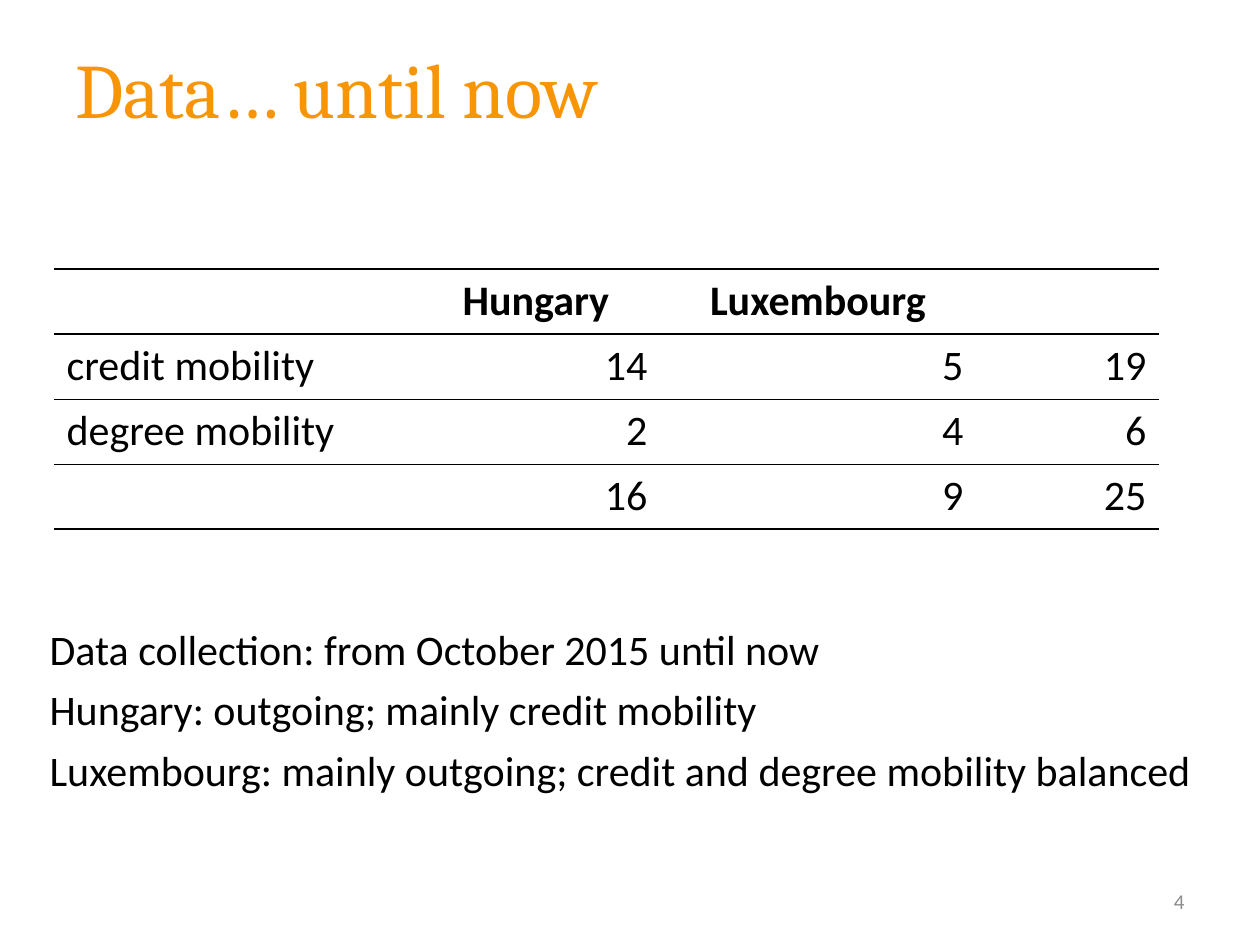
from pptx import Presentation
from pptx.dml.color import RGBColor
from pptx.enum.text import MSO_ANCHOR, MSO_AUTO_SIZE, PP_ALIGN
from pptx.oxml.ns import qn
from pptx.util import Pt
from lxml.etree import SubElement

PX = 914400 / 126
NO_STYLE = "{2D5ABB26-0587-4C30-8999-92F81FD0307C}"


def px(n):
    return round(n * PX)


def rgb(color):
    return RGBColor.from_string(color)


class Deck:
    """Holds the style and the current slide, and adds each kind of element."""

    heading, font = "Cambria", "Calibri"
    orange, black, grey = "F79505", "000000", "8C8C8C"

    def __init__(self):
        self.prs = Presentation()
        self.prs.slide_width, self.prs.slide_height = px(1260), px(945)
        self.s = self.prs.slides.add_slide(self.prs.slide_layouts[1])

    def run(self, p, text, size, color, font=None, bold=False, align=PP_ALIGN.LEFT):
        p.alignment = align
        r = p.add_run()
        r.text = text
        r.font.name, r.font.size, r.font.bold = font or self.font, Pt(size), bold
        r.font.color.rgb = rgb(color)

    def place(self, sp, x, y, w, h, anchor):
        sp.left, sp.top, sp.width, sp.height = map(px, (x, y, w, h))
        tf = sp.text_frame
        tf.word_wrap, tf.vertical_anchor = True, anchor
        tf.auto_size = MSO_AUTO_SIZE.NONE
        return tf

    def title(self, text, *box):
        tf = self.place(self.s.shapes.title, *box, MSO_ANCHOR.MIDDLE)
        self.run(tf.paragraphs[0], text, 44, self.orange, self.heading)

    def body(self, lines, *box):
        tf = self.place(self.s.placeholders[1], *box, MSO_ANCHOR.TOP)
        for i, line in enumerate(lines):
            p = tf.add_paragraph() if i else tf.paragraphs[0]
            p.line_spacing, p.space_before = 1.2, Pt(0)
            pPr = p._p.get_or_add_pPr()
            pPr.set("marL", "0")
            pPr.set("indent", "0")
            SubElement(pPr, qn("a:buNone"))
            self.run(p, line, 24, self.black)

    def number(self, text, *box):
        sp = self.s.shapes.add_textbox(0, 0, 0, 0)
        tf = self.place(sp, *box, MSO_ANCHOR.MIDDLE)
        self.run(tf.paragraphs[0], text, 12, self.grey, align=PP_ALIGN.RIGHT)

    def border(self, cell, side, width):
        ln = SubElement(cell._tc.get_or_add_tcPr(), qn(f"a:ln{side}"), w=str(Pt(width)))
        fill = SubElement(ln, qn("a:solidFill"))
        SubElement(fill, qn("a:srgbClr"), val=self.black)

    def table(self, rows, x, y, widths, row_h, rules):
        frame = self.s.shapes.add_table(len(rows), len(widths), px(x), px(y),
                                        px(sum(widths)), px(row_h * len(rows)))
        tbl = frame.table
        tbl.first_row = tbl.horz_banding = False
        tbl._tbl.tblPr.find(qn("a:tableStyleId")).text = NO_STYLE
        for col, w in zip(tbl.columns, widths):
            col.width = px(w)
        for i, row in enumerate(rows):
            tbl.rows[i].height = px(row_h)
            for j, text in enumerate(row):
                cell = tbl.cell(i, j)
                for side, edge in (("T", i), ("B", i + 1)):
                    if edge in rules:
                        self.border(cell, side, rules[edge])
                cell.fill.background()
                if text:
                    align = (PP_ALIGN.CENTER if i == 0 else
                             PP_ALIGN.RIGHT if j else PP_ALIGN.LEFT)
                    self.run(cell.text_frame.paragraphs[0], text, 24, self.black,
                             bold=i == 0, align=align)


def main():
    d = Deck()
    d.title("Data… until now", 63, 6, 1197, 164)
    d.table([["", "Hungary", "Luxembourg", ""],
             ["credit mobility", "14", "5", "19"],
             ["degree mobility", "2", "4", "6"],
             ["", "16", "9", "25"]],
            54, 269, [358, 248, 316, 183], 65, {0: 1, 1: 1, 2: 0.5, 4: 1})
    d.body(["Data collection: from October 2015 until now",
            "Hungary: outgoing; mainly credit mobility",
            "Luxembourg: mainly outgoing; credit and degree mobility balanced"],
           37, 607, 1203, 295)
    d.number("4", 903, 876, 294, 50)
    d.prs.save("out.pptx")


if __name__ == "__main__":
    main()
